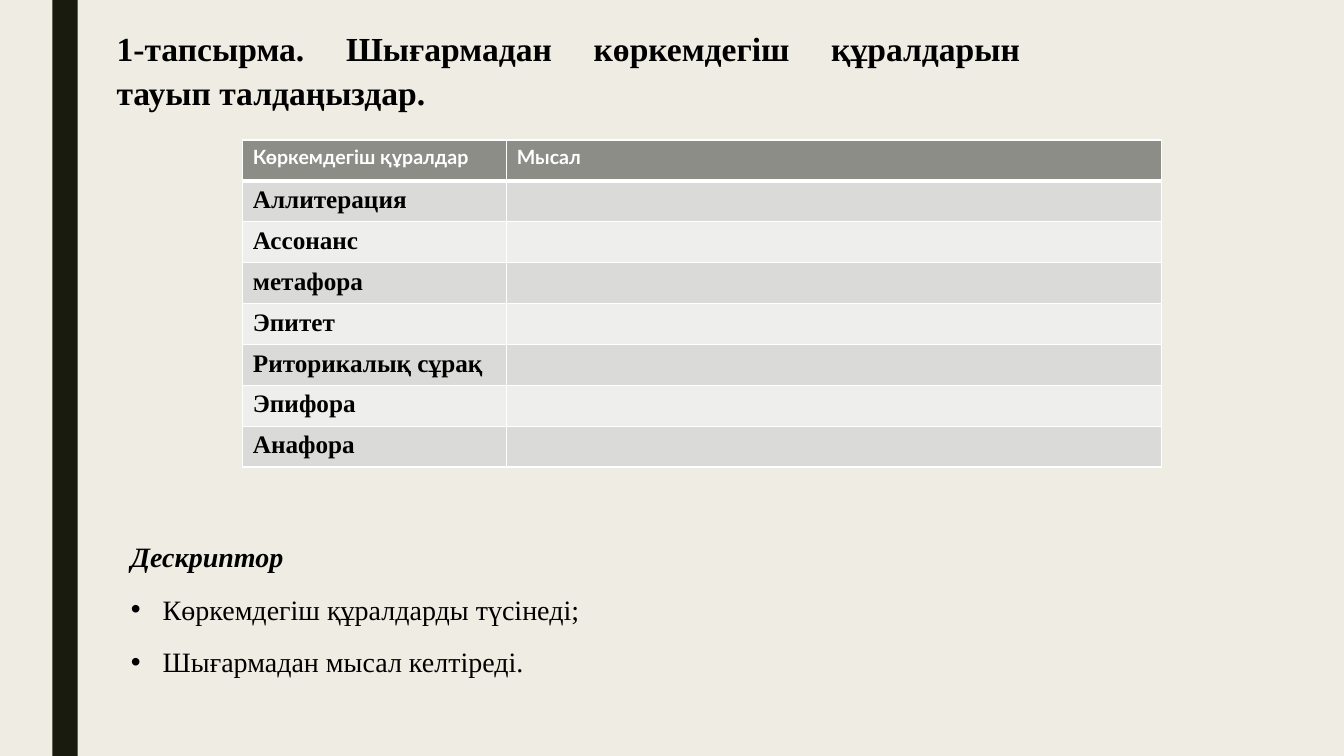
from lxml.etree import SubElement
from pptx import Presentation
from pptx.dml.color import RGBColor
from pptx.enum.shapes import MSO_SHAPE
from pptx.enum.text import MSO_AUTO_SIZE, PP_ALIGN
from pptx.oxml import parse_xml
from pptx.oxml.ns import nsdecls, qn
from pptx.util import Cm, Pt

CREAM = RGBColor(0xEF, 0xED, 0xE3)
DARK = RGBColor(0x19, 0x1B, 0x0E)
GRAY = RGBColor(0x8C, 0x8D, 0x86)
BANDS = (RGBColor(0xEE, 0xEE, 0xED), RGBColor(0xDA, 0xDB, 0xD9))
BLACK = RGBColor(0, 0, 0)
WHITE = RGBColor(0xFF, 0xFF, 0xFF)

TERMS = ["Көркемдегіш құралдар", "Аллитерация", "Ассонанс", "метафора",
         "Эпитет", "Риторикалық сұрақ", "Эпифора", "Анафора"]
GOALS = ["Дескриптор", "Көркемдегіш құралдарды түсінеді;",
         "Шығармадан мысал келтіреді."]


class Deck:
    serif = "Times New Roman"
    sans = "Lato"

    def __init__(self):
        self.file = Presentation()
        self.file.slide_width = Cm(33.87)
        self.file.slide_height = Cm(19.05)
        self.slide = self.file.slides.add_slide(self.file.slide_layouts[6])
        fill = self.slide.background.fill
        fill.solid()
        fill.fore_color.rgb = CREAM

    def style(self, para, size, face, color, bold=True, slant=False):
        for run in para.runs:
            font = run.font
            font.size, font.name = Pt(size), face
            font.bold, font.italic = bold, slant
            font.color.rgb = color

    def bar(self, *box):
        bar = self.slide.shapes.add_shape(MSO_SHAPE.RECTANGLE, *map(Cm, box))
        bar.shadow.inherit = False
        bar.fill.solid()
        bar.fill.fore_color.rgb = DARK
        bar.line.fill.background()

    def text(self, box, lines, space):
        frame = self.slide.shapes.add_textbox(*map(Cm, box)).text_frame
        frame.word_wrap = True
        frame.auto_size = MSO_AUTO_SIZE.SHAPE_TO_FIT_TEXT
        frame.text = "\n".join(lines)
        for para in frame.paragraphs:
            para.line_spacing = space
            para.space_after = Pt(10)
        return frame.paragraphs

    def bullet(self, para):
        props = para._p.get_or_add_pPr()
        props.set("marL", str(Cm(0.8)))
        props.set("indent", str(-Cm(0.8)))
        SubElement(props, qn("a:buFont"), typeface="Arial")
        SubElement(props, qn("a:buChar"), char="•")

    def cell(self, cell, text, head, color):
        cell.fill.solid()
        cell.fill.fore_color.rgb = color
        cell.text = text
        para = cell.text_frame.paragraphs[0]
        para.alignment = PP_ALIGN.JUSTIFY
        if head:
            self.style(para, 14, self.sans, WHITE)
        else:
            self.style(para, 18, self.serif, BLACK)
        props = cell._tc.get_or_add_tcPr()
        for spot, side in enumerate("LRTB"):
            width = Pt(3 if head and side == "B" else 1)
            props.insert(spot, parse_xml(
                f'<a:ln{side} {nsdecls("a")} w="{width}"><a:solidFill>'
                f'<a:srgbClr val="{WHITE}"/></a:solidFill></a:ln{side}>'))

    def table(self, left, top, widths, height, rows):
        grid = self.slide.shapes.add_table(
            len(rows), len(widths), Cm(left), Cm(top),
            Cm(sum(widths)), Cm(height * len(rows))).table
        for col, width in zip(grid.columns, widths):
            col.width = Cm(width)
        for i, row in enumerate(rows):
            color = BANDS[i % 2] if i else GRAY
            for j, text in enumerate(row):
                self.cell(grid.cell(i, j), text, i == 0, color)


def main():
    deck = Deck()

    # Side bar
    deck.bar(1.32, 0, 0.64, 19.05)

    # Table of devices and examples
    rows = [(term, "" if i else "Мысал") for i, term in enumerate(TERMS)]
    deck.table(6.12, 3.53, (6.65, 16.5), 1.03, rows)

    # Task title
    title = deck.text((2.69, 0.48, 23.27, 2.49), [
        "1-тапсырма. Шығармадан көркемдегіш құралдарын тауып талдаңыздар."],
        1.09)[0]
    title.alignment = PP_ALIGN.JUSTIFY
    deck.style(title, 24, deck.serif, BLACK)

    # Descriptor list
    goals = deck.text((3.05, 13.34, 23.85, 3.91), GOALS, 1.15)
    for i, para in enumerate(goals):
        if i:
            deck.bullet(para)
        deck.style(para, 20, deck.serif, BLACK, i == 0, i == 0)

    deck.file.save("out.pptx")


if __name__ == "__main__":
    main()
